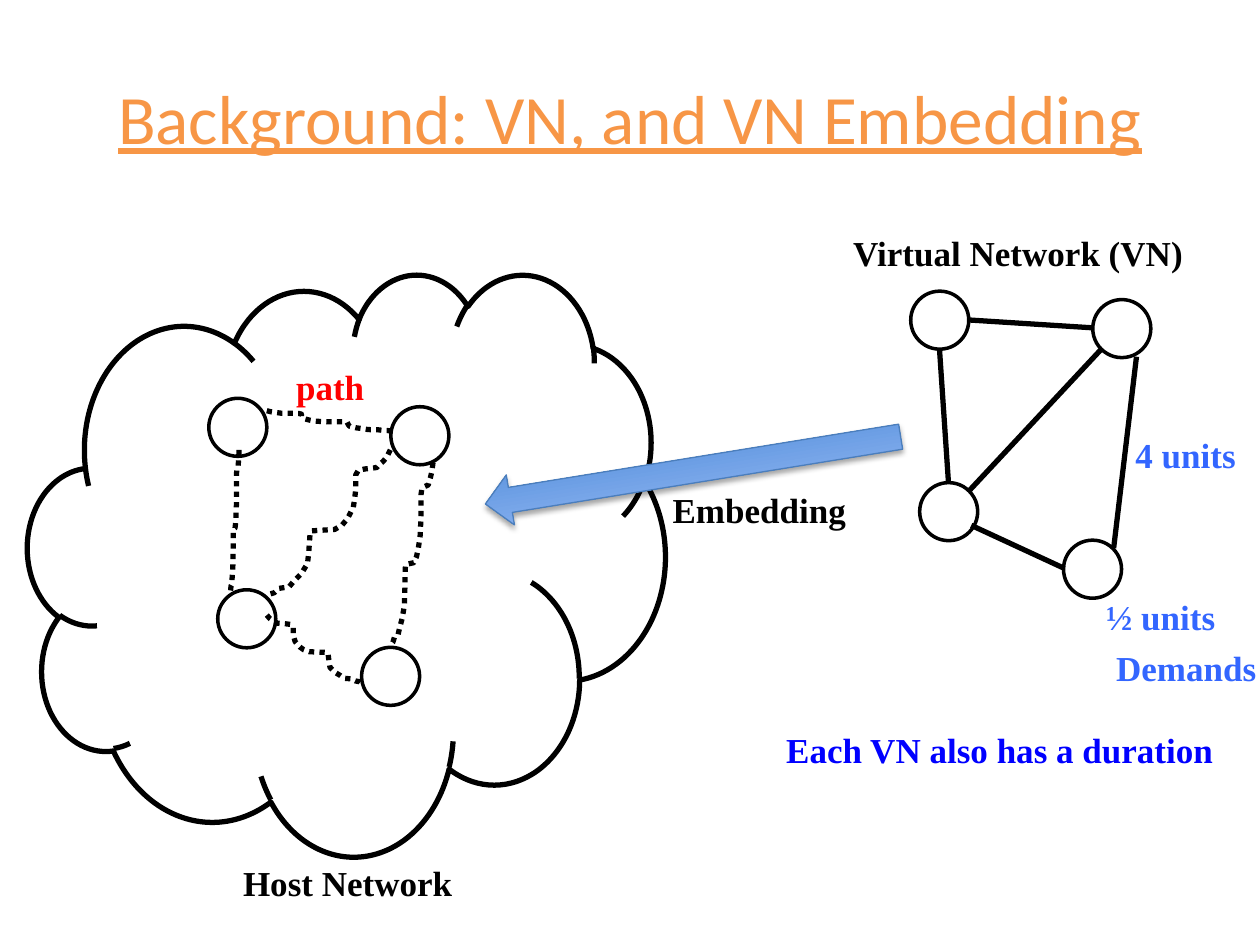
from lxml import etree
from pptx import Presentation
from pptx.dml.color import RGBColor
from pptx.enum.dml import MSO_LINE
from pptx.enum.shapes import MSO_CONNECTOR, MSO_SHAPE
from pptx.enum.text import MSO_ANCHOR, MSO_AUTO_SIZE, PP_ALIGN
from pptx.oxml.ns import qn
from pptx.util import Cm, Pt

CLOUD, OVAL, ARROW = MSO_SHAPE.CLOUD, MSO_SHAPE.OVAL, MSO_SHAPE.RIGHT_ARROW
STRAIGHT = MSO_CONNECTOR.STRAIGHT
DOTS = MSO_LINE.ROUND_DOT
MIDDLE, CENTER = MSO_ANCHOR.MIDDLE, PP_ALIGN.CENTER
FIT = MSO_AUTO_SIZE.SHAPE_TO_FIT_TEXT

COLORS = {
    "title": "F79646", "ink": "000000", "path": "FF0000",
    "demand": "3366FF", "note": "0000FF",
    "edge": "4B7EBC", "dark": "3F80CE", "light": "A4C4FF",
}
TITLE = {"name": "Calibri", "size": Pt(39.6), "underline": True}
LABEL = {"name": "Times New Roman", "size": Pt(20), "bold": True}

# Both networks share one node layout (cm from the first node)
NODE = 1.17
NODES = [(0, 0), (3.67, 0.17), (0.18, 3.86), (3.08, 5.02)]
LINKS = [
    (1.17, 0.58, 3.69, 0.74), (1.19, 4.01, 3.84, 1.17),
    (0.58, 1.17, 0.76, 3.86), (1.22, 4.72, 3.1, 5.59),
    (4.09, 5.18, 4.55, 1.32),
]
PATHS = [
    (1.17, 0.25, 3.66, 0.66), (1.17, 4.37, 3.07, 5.74),
    (4.52, 1.3, 3.66, 5.03), (0.61, 1.04, 0.43, 3.96),
    (3.66, 1.04, 1.17, 4.01),
]
# Course of every path, as fractions of the way from start to end
WIGGLE = [
    (0, 0), (0.03, 0.05), (0.06, 0.08), (0.09, 0.1), (0.11, 0.12),
    (0.21, 0.13), (0.26, 0.14), (0.28, 0.17), (0.28, 0.27), (0.29, 0.34),
    (0.3, 0.39), (0.33, 0.44), (0.35, 0.47), (0.39, 0.51), (0.45, 0.54),
    (0.64, 0.55), (0.65, 0.57), (0.66, 0.69), (0.67, 0.77), (0.72, 0.84),
    (0.78, 0.89), (0.82, 0.93), (0.9, 0.94), (0.94, 0.97), (0.98, 0.98),
    (1, 1),
]


def color(name):
    return RGBColor.from_string(COLORS[name])


def ink(line, width, name="ink"):
    line.color.rgb = color(name)
    line.width = Pt(width)


def write(slide, text, box, tone, style=LABEL):
    """Add a text box with one styled run and return its frame."""
    frame = slide.shapes.add_textbox(*map(Cm, box)).text_frame
    frame.word_wrap = False
    run = frame.paragraphs[0].add_run()
    run.text = text
    for key, value in style.items():
        setattr(run.font, key, value)
    run.font.color.rgb = color(tone)
    return frame


def label(slide, text, left, top, width, tone="ink"):
    frame = write(slide, text, (left, top, width, 1.12), tone)
    frame.auto_size = FIT


def hollow(slide, kind, box, width):
    shape = slide.shapes.add_shape(kind, *map(Cm, box))
    shape.shadow.inherit = False
    shape.fill.background()
    ink(shape.line, width)


def draw_nodes(slide, left, top):
    for dx, dy in NODES:
        hollow(slide, OVAL, (left + dx, top + dy, NODE, NODE), 2)


def draw_link(slide, left, top, link):
    x1, y1, x2, y2 = link
    ends = (left + x1, top + y1, left + x2, top + y2)
    line = slide.shapes.add_connector(STRAIGHT, *map(Cm, ends))
    ink(line.line, 3)
    etree.SubElement(line._element.spPr, qn("a:effectLst"))


def draw_path(slide, left, top, ends):
    x1, y1, x2, y2 = ends
    points = [
        (Cm(left + x1 + u * (x2 - x1)), Cm(top + y1 + v * (y2 - y1)))
        for u, v in WIGGLE
    ]
    pen = slide.shapes.build_freeform(*points[0])
    pen.add_line_segments(points[1:], close=False)
    shape = pen.convert_to_shape()
    shape.shadow.inherit = False
    shape.fill.background()
    ink(shape.line, 3)
    shape.line.dash_style = DOTS


def add_title(slide, box):
    frame = write(slide, "Background: VN, and VN Embedding", box, "title", TITLE)
    frame.word_wrap = True
    frame.vertical_anchor = MIDDLE
    frame.paragraphs[0].alignment = CENTER


def add_host(slide, box):
    left, top, width, height = box
    hollow(slide, CLOUD, box, 3)
    x, y = left + 3.65, top + 2.52
    draw_nodes(slide, x, y)
    for ends in PATHS:
        draw_path(slide, x, y, ends)
    label(slide, "path", left + 5.16, top + 1.73, 1.9, "path")
    label(slide, "Host Network", left + 4.09, top + height, 4.78)


def add_virtual(slide, box):
    left, top, width, height = box
    x, y = left + 2.76, top + 1.32
    draw_nodes(slide, x, y)
    for link in LINKS:
        draw_link(slide, x, y, link)
    label(slide, "Virtual Network (VN)", left + 1.35, top, 7.21)
    for text, dx, dy, wide in [
        ("4 units", 7.04, 4.06, 2.54),
        ("½ units", 6.45, 7.34, 2.72),
        ("Demands", 6.65, 8.36, 3.35),
    ]:
        label(slide, text, left + dx, top + dy, wide, "demand")
    label(slide, "Each VN also has a duration", left, top + height - 1.12,
          9.19, "note")


def cast_shadow(shape):
    shape.shadow.inherit = False
    effects = shape._element.spPr.find(qn("a:effectLst"))
    outer = etree.SubElement(effects, qn("a:outerShdw"), blurRad="40000",
                             dist="23000", dir="5400000", rotWithShape="0")
    tint = etree.SubElement(outer, qn("a:srgbClr"), val=COLORS["ink"])
    etree.SubElement(tint, qn("a:alpha"), val="35000")


def add_embedding(slide, box):
    left, top, width, height = box
    arrow = slide.shapes.add_shape(ARROW, *map(Cm, box))
    arrow.rotation = 170.8
    arrow.fill.gradient()
    arrow.fill.gradient_angle = 90
    for stop, name, spot in zip(arrow.fill.gradient_stops,
                                ("dark", "light"), (0, 1)):
        stop.color.rgb = color(name)
        stop.position = spot
    ink(arrow.line, 0.75, "edge")
    cast_shadow(arrow)
    label(slide, "Embedding", left + 3.58, top + 0.76, 4.04)


def main():
    deck = Presentation()
    deck.slide_width, deck.slide_height = Cm(25.4), Cm(19.05)
    slide = deck.slides.add_slide(deck.slide_layouts[6])
    add_title(slide, (1.27, 0.76, 22.86, 3.18))
    add_host(slide, (0.56, 5.51, 12.85, 11.73))
    add_virtual(slide, (15.6, 4.55, 10, 11.13))
    add_embedding(slide, (9.73, 8.97, 8.48, 1.02))
    deck.save("out.pptx")


if __name__ == "__main__":
    main()
